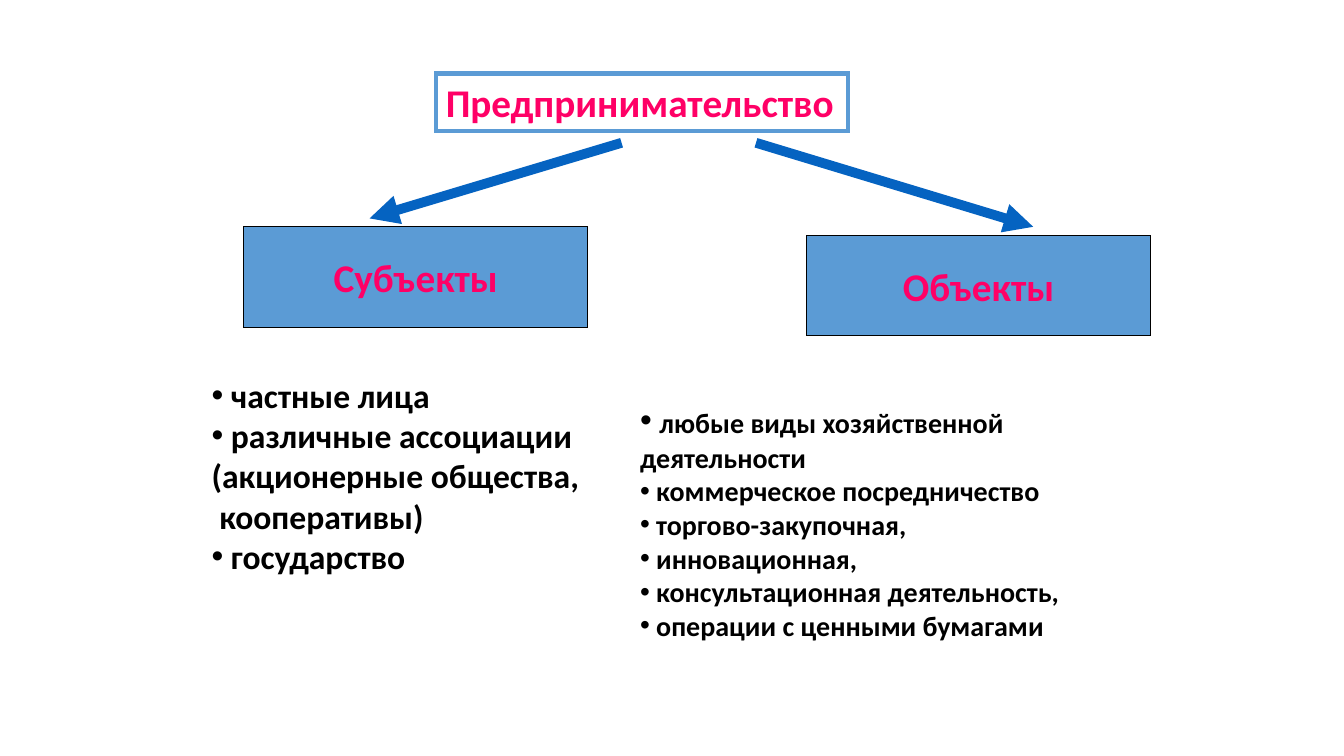
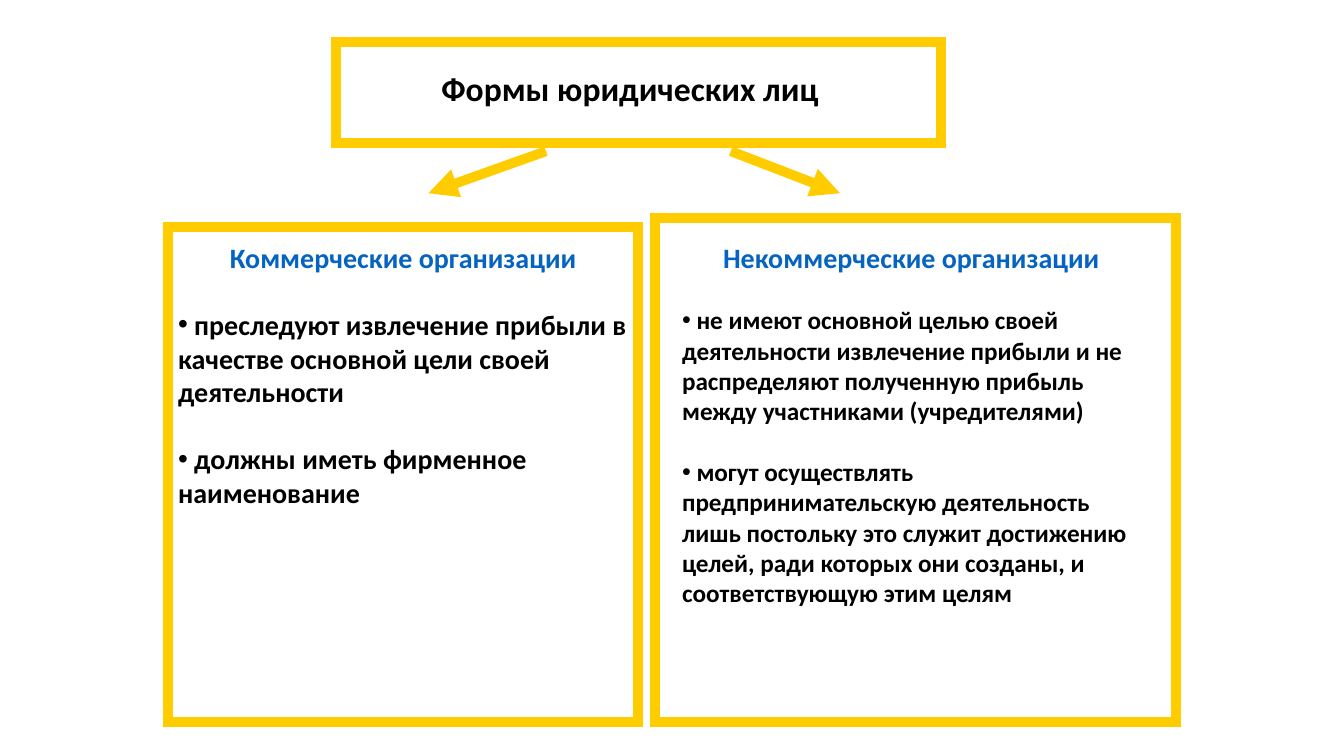
from dataclasses import dataclass
from typing import NamedTuple

from pptx import Presentation
from pptx.dml.color import RGBColor
from pptx.enum.shapes import MSO_CONNECTOR, MSO_SHAPE
from pptx.enum.text import MSO_ANCHOR, MSO_AUTO_SIZE, PP_ALIGN
from pptx.oxml.ns import qn
from pptx.util import Emu, Pt
from lxml.etree import SubElement

EMU_PER_PX = 9525
FONT = "Calibri"
TWO_CONTENT = 3

BLACK = RGBColor(0x00, 0x00, 0x00)
PINK = RGBColor(0xFF, 0x00, 0x66)
SKY = RGBColor(0x5B, 0x9B, 0xD5)
BLUE = RGBColor(0x05, 0x63, 0xC1)
YELLOW = RGBColor(0xFF, 0xCC, 0x00)


class Box(NamedTuple):
    left: int
    top: int
    width: int
    height: int


class Arrow(NamedTuple):
    x1: int
    y1: int
    x2: int
    y2: int


class Span(NamedTuple):
    text: str
    size: int
    color: RGBColor = BLACK


@dataclass
class Line:
    spans: list[Span]
    bullet: bool = False
    centered: bool = False
    before: int = 0


@dataclass
class Column:
    box: Box
    lines: list[Line]


def px(value: int) -> Emu:
    return Emu(value * EMU_PER_PX)


def item(text: str, size: int, before: int = 0) -> Line:
    return Line([Span(" " + text, size)], bullet=True, before=before)


def plain(text: str, size: int) -> Line:
    return Line([Span(text, size)])


def heading(text: str, size: int, color: RGBColor) -> Line:
    return Line([Span(text, size, color)], centered=True)


def write_lines(frame, lines: list[Line], anchor=MSO_ANCHOR.TOP) -> None:
    frame.auto_size = MSO_AUTO_SIZE.NONE
    frame.word_wrap = True
    frame.vertical_anchor = anchor
    for index, line in enumerate(lines):
        paragraph = frame.add_paragraph() if index else frame.paragraphs[0]
        paragraph.alignment = PP_ALIGN.CENTER if line.centered else PP_ALIGN.LEFT
        paragraph.space_before = Pt(line.before)
        properties = paragraph._p.get_or_add_pPr()
        properties.set("marL", "0")
        properties.set("indent", "0")
        if line.bullet:
            SubElement(properties, qn("a:buFont")).set("typeface", "Arial")
            SubElement(properties, qn("a:buChar")).set("char", "•")
        else:
            SubElement(properties, qn("a:buNone"))
        for span in line.spans:
            run = paragraph.add_run()
            run.text = span.text
            run.font.name = FONT
            run.font.size = Pt(span.size)
            run.font.bold = True
            run.font.color.rgb = span.color


def place(shape, box: Box) -> None:
    shape.left, shape.top, shape.width, shape.height = map(px, box)


def outline(shape, color: RGBColor, weight: float) -> None:
    shape.line.color.rgb = color
    shape.line.width = Pt(weight)
    stroke = shape._element.spPr.find(qn("a:ln"))
    SubElement(stroke, qn("a:miter")).set("lim", "800000")


def add_rectangle(slide, box: Box, color: RGBColor, weight: float):
    rectangle = slide.shapes.add_shape(MSO_SHAPE.RECTANGLE, *map(px, box))
    rectangle.shadow.inherit = False
    rectangle.fill.background()
    outline(rectangle, color, weight)
    return rectangle


def add_branch(slide, box: Box, text: str) -> None:
    branch = add_rectangle(slide, box, BLACK, 0.75)
    branch.fill.solid()
    branch.fill.fore_color.rgb = SKY
    write_lines(branch.text_frame, [heading(text, 28, PINK)], MSO_ANCHOR.MIDDLE)


def add_arrow(slide, arrow: Arrow, color: RGBColor) -> None:
    connector = slide.shapes.add_connector(MSO_CONNECTOR.STRAIGHT, *map(px, arrow))
    outline(connector, color, 7)
    properties = connector._element.spPr
    SubElement(properties.find(qn("a:ln")), qn("a:tailEnd")).set("type", "triangle")
    SubElement(properties, qn("a:effectLst"))


def add_scheme(prs, title_box: Box, title: Line, columns: list[Column],
               arrows: list[Arrow], arrow_color: RGBColor):
    slide = prs.slides.add_slide(prs.slide_layouts[TWO_CONTENT])
    place(slide.shapes.title, title_box)
    write_lines(slide.shapes.title.text_frame, [title])
    for index, column in enumerate(columns, start=1):
        body = slide.placeholders[index]
        place(body, column.box)
        write_lines(body.text_frame, column.lines)
    for arrow in arrows:
        add_arrow(slide, arrow, arrow_color)
    return slide


def build_entrepreneurship(prs) -> None:
    subjects = Column(Box(192, 352, 424, 204), [
        item("частные лица", 24),
        item("различные ассоциации", 24),
        plain("(акционерные общества,", 24),
        plain(" кооперативы)", 24),
        item("государство", 24),
    ])
    activities = ["коммерческое посредничество", "торгово-закупочная,", "инновационная,",
                  "консультационная деятельность,", "операции с ценными бумагами"]
    objects = Column(Box(600, 376, 440, 275), [
        Line([Span(" ", 24), Span("любые виды хозяйственной", 20)], bullet=True),
        plain("деятельности", 20),
        *[item(activity, 20) for activity in activities],
    ])
    slide = add_scheme(
        prs, Box(415, 70, 393, 55), Line([Span("Предпринимательство", 28, PINK)]),
        [subjects, objects],
        [Arrow(592, 136, 352, 208), Arrow(720, 136, 984, 216)], BLUE)
    outline(slide.shapes.title, SKY, 3)
    add_branch(slide, Box(232, 216, 328, 96), "Субъекты")
    add_branch(slide, Box(768, 224, 328, 96), "Объекты")


def build_legal_forms(prs) -> None:
    commercial = Column(Box(160, 224, 448, 266), [
        heading("Коммерческие организации", 20, BLUE),
        item("преследуют извлечение прибыли в качестве основной цели своей "
             "деятельности", 20, before=24),
        item("должны иметь фирменное наименование", 20, before=24),
    ])
    noncommercial = Column(Box(640, 224, 456, 362), [
        heading("Некоммерческие организации", 20, BLUE),
        item("не имеют основной целью своей деятельности извлечение прибыли и не "
             "распределяют полученную прибыль между участниками (учредителями)",
             18, before=22),
        item("могут осуществлять предпринимательскую деятельность лишь постольку "
             "это служит достижению целей, ради которых они созданы, и "
             "соответствующую этим целям", 18, before=22),
    ])
    slide = add_scheme(
        prs, Box(343, 60, 514, 48), heading("Формы юридических лиц", 24, BLACK),
        [commercial, noncommercial],
        [Arrow(520, 144, 408, 184), Arrow(696, 144, 800, 184)], YELLOW)
    for frame in (Box(320, 40, 576, 96), Box(160, 216, 448, 472), Box(624, 208, 496, 480)):
        add_rectangle(slide, frame, YELLOW, 7)


def main() -> None:
    prs = Presentation()
    prs.slide_width, prs.slide_height = px(1280), px(720)
    build_entrepreneurship(prs)
    build_legal_forms(prs)
    prs.save("out.pptx")


if __name__ == "__main__":
    main()
